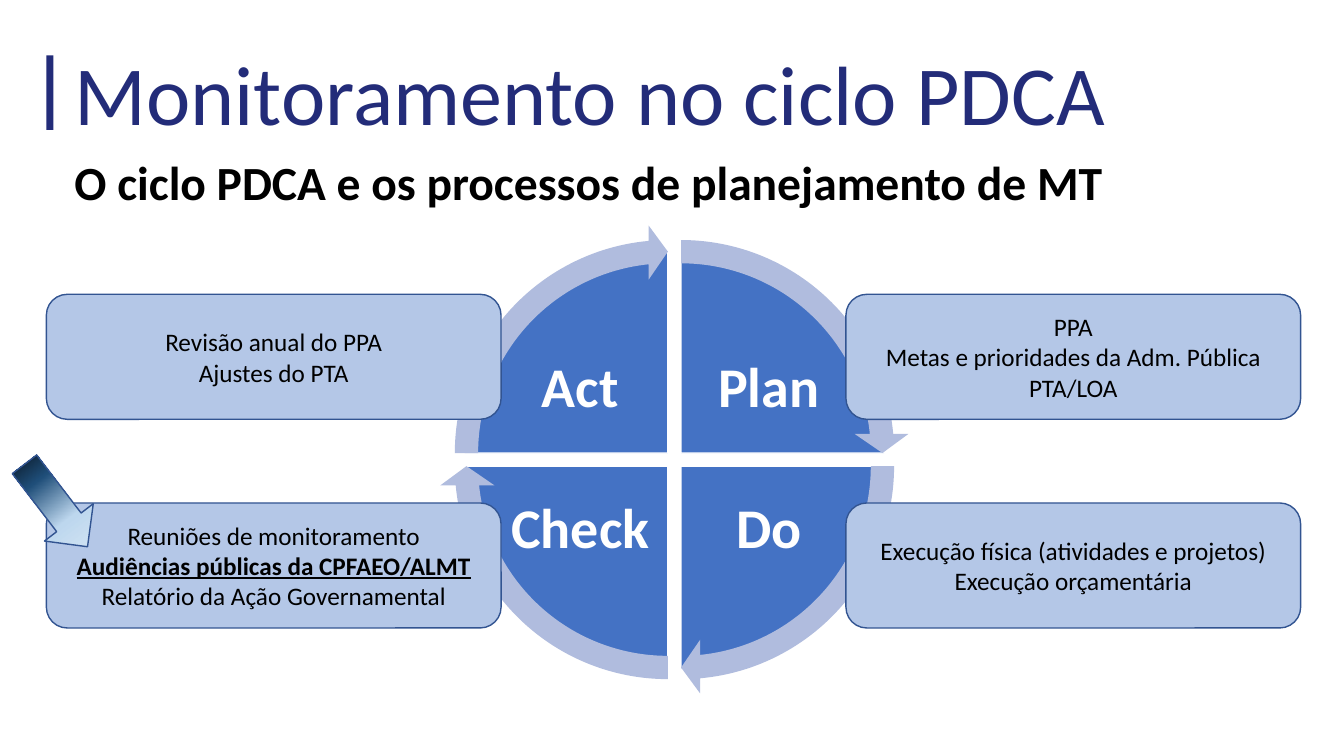
from lxml import etree
from pptx import Presentation
from pptx.dml.color import RGBColor
from pptx.enum.shapes import MSO_SHAPE
from pptx.enum.text import MSO_ANCHOR, PP_ALIGN
from pptx.oxml.ns import qn
from pptx.util import Inches, Pt

FONT = "Calibri"
COLORS = {
    "navy": "232C79", "black": "000000", "white": "FFFFFF", "blue": "4472C4",
    "ring": "B0BCDE", "card": "B4C7E7", "outline": "325491",
}
TITLE = "Monitoramento no ciclo PDCA"
SUBTITLE = "O ciclo PDCA e os processos de planejamento de MT"
HIGHLIGHT = "Audiências públicas da CPFAEO/ALMT"
# Clockwise from the top: stage, column, row, card lines
STAGES = [
    ("Plan", 1, 0, ["PPA", "Metas e prioridades da Adm. Pública", "PTA/LOA"]),
    ("Do", 1, 1, ["Execução física (atividades e projetos)",
                  "Execução orçamentária"]),
    ("Check", 0, 1, ["Reuniões de monitoramento", HIGHLIGHT,
                     "Relatório da Ação Governamental"]),
    ("Act", 0, 0, ["Revisão anual do PPA", "Ajustes do PTA"]),
]
POINTER_STOPS = [(0, "DEEBF7"), (39, "BDD7EE"), (69, "1F4E79"), (100, "000000")]

# Adjustment values for angles are in units of 100000/60000 degrees
QUARTER, FULL_TURN = 54, 216
PIE_LEFT, PIE_TOP, PIE_SIZE, GAP = 4.61, 2.48, 4.03, 0.13
RING_MARGIN = 0.25
LABEL_X, LABEL_Y = (5.01, 6.88), (3.31, 4.71)
CARD_X, CARD_Y = (0.46, 8.39), (2.92, 4.99)


def rgb(name):
    return RGBColor.from_string(COLORS[name])


def inches(*lengths):
    return [Inches(v) for v in lengths]


def add_run(p, text, size, color, bold=False):
    r = p.add_run()
    r.text = text
    r.font.name, r.font.size, r.font.bold = FONT, Pt(size), bold
    r.font.color.rgb = rgb(color)
    return r


def add_text(shapes, box, text, size, color, bold=False, align=PP_ALIGN.LEFT):
    tf = shapes.add_textbox(*inches(*box)).text_frame
    tf.word_wrap = True
    p = tf.paragraphs[0]
    p.alignment = align
    add_run(p, text, size, color, bold)
    return tf


def add_shape(shapes, kind, box, fill=None, line=None, adjustments=()):
    sp = shapes.add_shape(kind, *inches(*box))
    sp.shadow.inherit = False
    for i, value in enumerate(adjustments):
        sp.adjustments[i] = value
    if fill:
        sp.fill.solid()
        sp.fill.fore_color.rgb = rgb(fill)
    if line:
        sp.line.color.rgb = rgb(line)
        sp.line.width = Pt(1)
    else:
        sp.line.fill.background()
    return sp


def add_cycle(slide):
    shapes = slide.shapes.add_group_shape().shapes
    starts = [(3 + i) * QUARTER % FULL_TURN for i in range(len(STAGES))]
    for (label, col, row, _), start in zip(STAGES, starts):
        box = (PIE_LEFT + col * GAP, PIE_TOP + row * GAP, PIE_SIZE, PIE_SIZE)
        add_shape(shapes, MSO_SHAPE.PIE, box, "blue", "white",
                  (start, (start + QUARTER) % FULL_TURN))
        tf = add_text(shapes, (LABEL_X[col], LABEL_Y[row], 1.49, 1.1),
                      label, 40, "white", True, PP_ALIGN.CENTER)
        tf.vertical_anchor = MSO_ANCHOR.MIDDLE
        tf.margin_left = tf.margin_right = Inches(0.06)
        tf.margin_top = tf.margin_bottom = Inches(0.06)
        tf.paragraphs[0].line_spacing = 0.9
    ring_size = PIE_SIZE + 2 * RING_MARGIN
    for (_, col, row, _), start in zip(STAGES, starts):
        box = (PIE_LEFT + col * GAP - RING_MARGIN,
               PIE_TOP + row * GAP - RING_MARGIN, ring_size, ring_size)
        add_shape(shapes, MSO_SHAPE.CIRCULAR_ARROW, box, "ring",
                  adjustments=(0.051, 3.275, start + 50.725, start, 0.059))


def add_card(slide, col, row, lines):
    sp = add_shape(slide.shapes, MSO_SHAPE.ROUNDED_RECTANGLE,
                   (CARD_X[col], CARD_Y[row], 4.51, 1.24), "card", "outline")
    tf = sp.text_frame
    tf.word_wrap = True
    tf.vertical_anchor = MSO_ANCHOR.MIDDLE
    for i, line in enumerate(lines):
        p = tf.add_paragraph() if i else tf.paragraphs[0]
        p.alignment = PP_ALIGN.CENTER
        r = add_run(p, line, 18, "black", line == HIGHLIGHT)
        r.font.underline = line == HIGHLIGHT


def add_pointer(slide):
    sp = add_shape(slide.shapes, MSO_SHAPE.UP_ARROW, (0.25, 4.5, 0.61, 1.03),
                   line="outline")
    sp.rotation = 142.6
    sp.fill.gradient()
    sp.fill.gradient_angle = 270
    stops = sp._element.spPr.find(qn("a:gradFill")).find(qn("a:gsLst"))
    for stop in list(stops):
        stops.remove(stop)
    for percent, color in POINTER_STOPS:
        stop = etree.SubElement(stops, qn("a:gs"), pos=str(percent * 1000))
        etree.SubElement(stop, qn("a:srgbClr"), val=color)


def main():
    prs = Presentation()
    prs.slide_width, prs.slide_height = inches(13.33, 7.5)
    slide = prs.slides.add_slide(prs.slide_layouts[6])
    add_text(slide.shapes, (0.64, 0.36, 11.6, 1.11), TITLE, 60, "navy")
    add_shape(slide.shapes, MSO_SHAPE.RECTANGLE, (0.46, 0.55, 0.07, 0.74), "navy")
    add_text(slide.shapes, (0.64, 1.47, 12.27, 0.67), SUBTITLE, 34, "black",
             True, PP_ALIGN.JUSTIFY)
    add_cycle(slide)
    for _, col, row, lines in STAGES:
        add_card(slide, col, row, lines)
    add_pointer(slide)
    prs.save("out.pptx")


if __name__ == "__main__":
    main()
